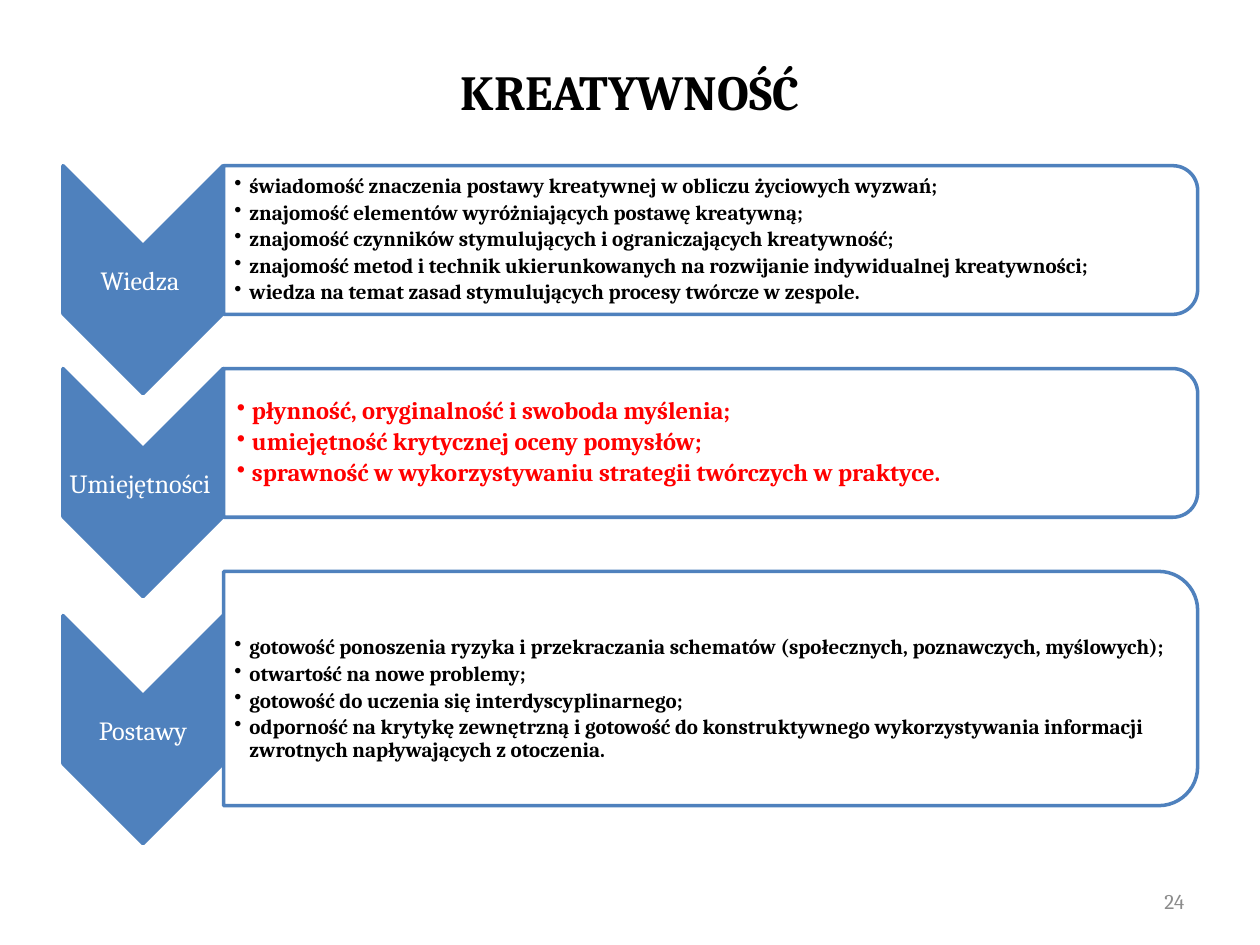
"""Build the slide on creativity: knowledge, skills and attitudes."""
from lxml.etree import SubElement
from pptx import Presentation
from pptx.dml.color import RGBColor
from pptx.enum.shapes import MSO_SHAPE
from pptx.enum.text import MSO_ANCHOR, PP_ALIGN
from pptx.oxml.ns import qn
from pptx.util import Inches, Pt

rgb = RGBColor.from_string

deck = Presentation()
deck.slide_width, deck.slide_height = Inches(10), Inches(7.5)
col, row = deck.slide_width / 100, deck.slide_height / 75
slide = deck.slides.add_slide(deck.slide_layouts[6])


def write(lines, left, top, width, height, size, color, align=PP_ALIGN.LEFT,
          bold=False, bullets=False, insets=(0.1, 0.05, 0.1, 0.05)):
    box = slide.shapes.add_textbox(int(left * col), int(top * row),
                                   int(width * col), int(height * row))
    frame = box.text_frame
    frame.word_wrap = True
    frame.vertical_anchor = MSO_ANCHOR.MIDDLE
    (frame.margin_left, frame.margin_top,
     frame.margin_right, frame.margin_bottom) = map(Inches, insets)
    frame.text = "\n".join(lines)
    for paragraph in frame.paragraphs:
        paragraph.alignment = align
        if bullets:
            paragraph.line_spacing = 0.9
            paragraph.space_after = Pt(round(size * 0.18, 1))
            properties = paragraph._p.get_or_add_pPr()
            properties.set("marL", str(Inches(0.12)))
            properties.set("indent", str(-Inches(0.12)))
            SubElement(properties, qn("a:buChar"), char="•")
        font = paragraph.font
        font.name, font.size, font.bold = "Cambria", Pt(size), bold
        font.color.rgb = rgb(color)


write(["KREATYWNOŚĆ"], 5, 3, 90, 8.4, 28, "000000", PP_ALIGN.CENTER, bold=True)

areas = [
    ("Wiedza ", 22.2, 19.05, 11.8, 12, "000000", 0.09, 0.01, [
        "świadomość znaczenia postawy kreatywnej w obliczu życiowych wyzwań;",
        "znajomość elementów wyróżniających postawę kreatywną;",
        "znajomość czynników stymulujących i ograniczających kreatywność;",
        "znajomość metod i technik ukierunkowanych na rozwijanie indywidualnej kreatywności;",
        "wiedza na temat zasad stymulujących procesy twórcze w zespole."]),
    ("Umiejętności ", 38.3, 35.15, 11.8, 14, "FF0000", 0.11, 0.01, [
        "płynność, oryginalność i swoboda myślenia;",
        "umiejętność krytycznej oceny pomysłów;",
        "sprawność w wykorzystywaniu strategii twórczych w praktyce."]),
    ("Postawy", 57.9, 54.65, 18.6, 12, "000000", 0.09, 0.18, [
        "gotowość ponoszenia ryzyka i przekraczania schematów (społecznych, poznawczych, myślowych);",
        "otwartość na nowe problemy;",
        "gotowość do uczenia się interdyscyplinarnego;",
        "odporność na krytykę zewnętrzną i gotowość do konstruktywnego wykorzystywania informacji zwrotnych napływających z otoczenia."]),
]

for area, arrow_y, panel_y, panel_height, size, color, indent, top_inset, points in areas:
    for preset, x, y, length, breadth, fill in (
            (MSO_SHAPE.CHEVRON, 11.35, arrow_y, 18.1, 12.7, "4F81BD"),
            (MSO_SHAPE.ROUND_2_SAME_RECTANGLE, 56.4, panel_y, panel_height, 77.3, "FFFFFF")):
        block = slide.shapes.add_shape(
            preset, int((x - length / 2) * col), int((y - breadth / 2) * row),
            int(length * col), int(breadth * row))
        block.rotation = 90
        block.shadow.inherit = False
        block.fill.solid()
        block.fill.fore_color.rgb = rgb(fill)
        block.line.color.rgb = rgb("4F81BD")
        block.line.width = Pt(2)
    write([area], 5, arrow_y - 2.7, 12.7, 5.4, 15, "FFFFFF", PP_ALIGN.CENTER,
          insets=(0.01,) * 4)
    write(points, 17.7, panel_y - panel_height / 2 + 0.6, 76.6, panel_height - 1.2,
          size, color, bold=True, bullets=True,
          insets=(indent, top_inset, 0.01, 0.01))

write(["24"], 71.7, 69.5, 23.3, 4, 12, "8C8C8C", PP_ALIGN.RIGHT)

deck.save("out.pptx")
